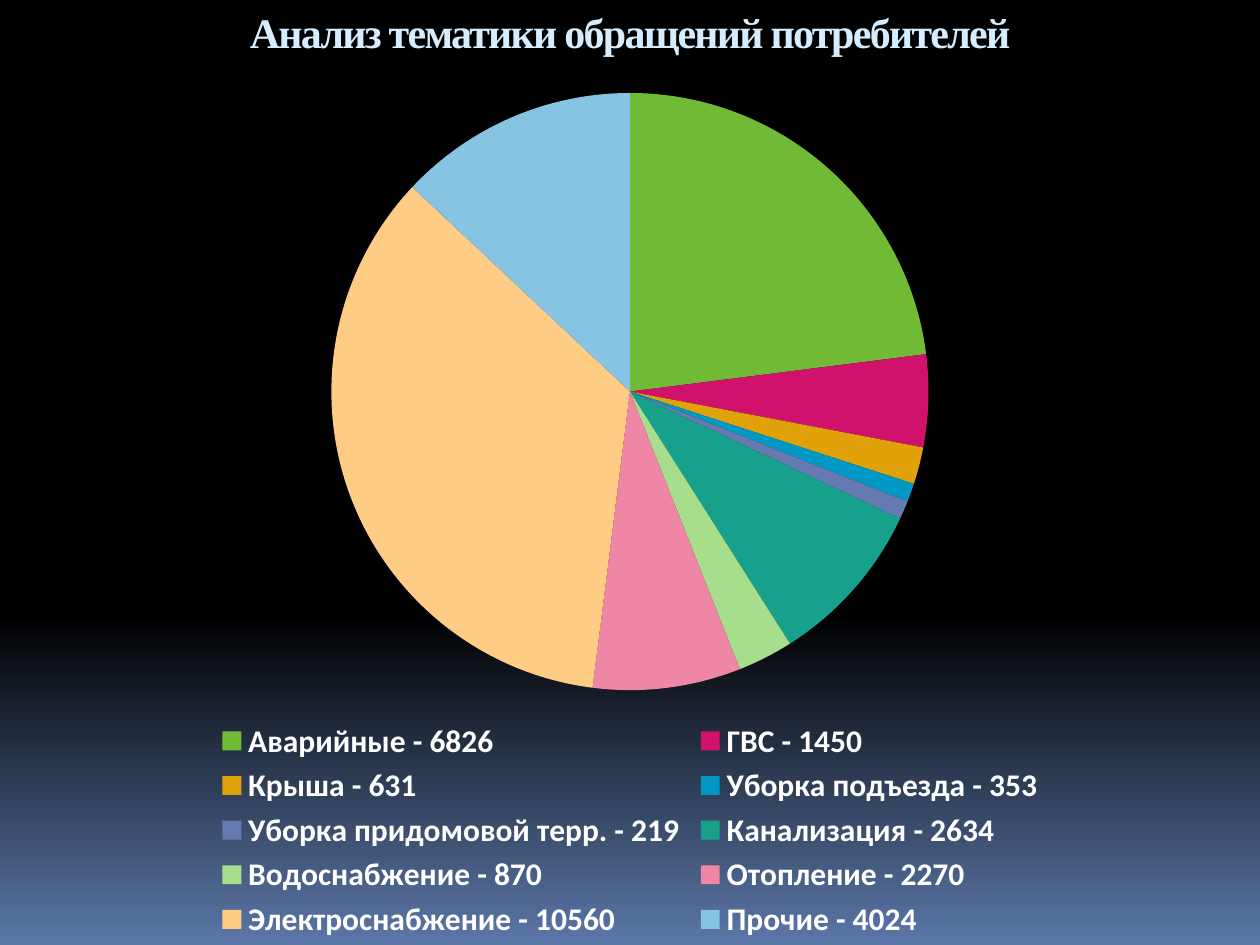
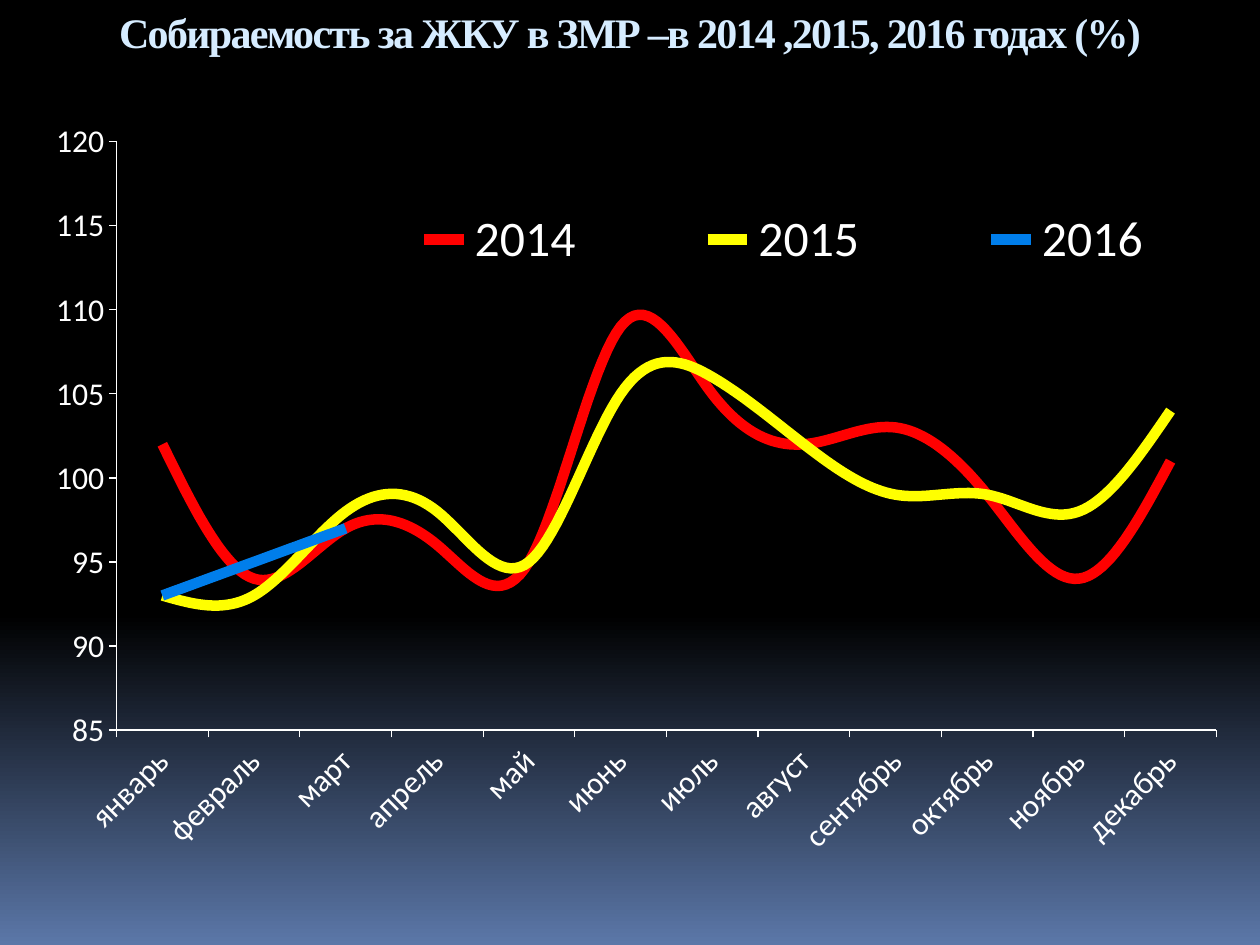
from dataclasses import dataclass

from lxml import etree
from pptx import Presentation
from pptx.chart.data import CategoryChartData
from pptx.dml.color import RGBColor
from pptx.enum.chart import XL_CHART_TYPE, XL_LEGEND_POSITION, XL_TICK_MARK
from pptx.enum.text import PP_ALIGN
from pptx.oxml.ns import qn
from pptx.util import Inches, Pt

PIE, LINE = XL_CHART_TYPE.PIE, XL_CHART_TYPE.LINE
BOTTOM, RIGHT = XL_LEGEND_POSITION.BOTTOM, XL_LEGEND_POSITION.RIGHT
CROSS = XL_TICK_MARK.OUTSIDE
CENTER = PP_ALIGN.CENTER

W, H = 10, 7.5

TOPICS_TITLE = "Анализ тематики обращений потребителей"
TOPICS = [
    ("Аварийные - 6826", 23, "70BA35"),
    ("ГВС - 1450", 5, "D1126C"),
    ("Крыша - 631", 2, "E0A208"),
    ("Уборка подъезда - 353", 1, "0098C4"),
    ("Уборка придомовой терр. - 219", 1, "657AB0"),
    ("Канализация - 2634", 9, "17A08C"),
    ("Водоснабжение - 870", 3, "A7DE8C"),
    ("Отопление - 2270", 8, "F086A6"),
    ("Электроснабжение - 10560", 35, "FFCC85"),
    ("Прочие - 4024", 13, "87C4E3"),
]

PAYMENT_TITLE = "Собираемость за ЖКУ в ЗМР –в 2014 ,2015, 2016 годах (%)"
MONTHS = ["январь", "февраль", "март", "апрель", "май", "июнь", "июль",
          "август", "сентябрь", "октябрь", "ноябрь", "декабрь"]
PAYMENT = [
    ("2014", "FF0000", [102, 94, 97, 96, 95, 109, 105, 102, 103, 99, 94, 101]),
    ("2015", "FFFF00", [93, 93, 98, 98, 95, 105, 106, 102, 99, 99, 98, 104]),
    ("2016", "007EEB", [93, 95, 97] + [None] * 9),
]


@dataclass(frozen=True)
class Theme:
    night: str = "000000"
    dusk: str = "5B77A8"
    title: str = "D6ECFF"
    text: str = "FFFFFF"
    title_font: str = "Times New Roman"
    chart_font: str = "Calibri"
    title_size: float = 24
    topics_size: float = 18
    axis_size: float = 18.1
    years_size: float = 28.4
    line_width: float = 6
    axis_width: float = 0.72


T = Theme()


def rgb(value):
    return RGBColor.from_string(value)


def add_slide(prs, title, title_height, tracking):
    s = prs.slides.add_slide(prs.slide_layouts[6])
    fill = s.background.fill
    fill.gradient()
    fill.gradient_angle = 270
    for stop, color, position in zip(fill.gradient_stops, (T.night, T.dusk), (0.65, 1)):
        stop.color.rgb = rgb(color)
        stop.position = position
    sp = s.shapes.add_textbox(0, 0, Inches(W), Inches(title_height))
    tf = sp.text_frame
    tf.word_wrap = True
    p = tf.paragraphs[0]
    p.alignment = CENTER
    r = p.add_run()
    r.text = title
    r.font.name, r.font.size, r.font.bold = T.title_font, Pt(T.title_size), True
    r.font.color.rgb = rgb(T.title)
    r.font._element.set("spc", str(tracking))
    return s


def place(parent, index, box, inner=False):
    for old in parent.findall(qn("c:layout")):
        parent.remove(old)
    layout = etree.Element(qn("c:layout"))
    manual = etree.SubElement(layout, qn("c:manualLayout"))
    settings = [("layoutTarget", "inner")] if inner else []
    settings += [("xMode", "edge"), ("yMode", "edge"), *zip("xywh", box)]
    for tag, value in settings:
        etree.SubElement(manual, qn("c:" + tag)).set("val", str(value))
    parent.insert(index, layout)


def add_chart(s, kind, top, categories, series, size, legend_at, plot_box, legend_box):
    data = CategoryChartData()
    data.categories = categories
    for name, values in series:
        data.add_series(name, values)
    chart = s.shapes.add_chart(kind, 0, Inches(top), Inches(W), Inches(H - top), data).chart
    chart.has_title = False
    chart.font.name, chart.font.size = T.chart_font, Pt(size)
    chart.font.color.rgb = rgb(T.text)
    chart.has_legend = True
    legend = chart.legend
    legend.position = legend_at
    legend.include_in_layout = False
    legend.font.name = T.chart_font
    legend.font.color.rgb = rgb(T.text)
    place(chart._chartSpace.chart.plotArea, 0, plot_box, inner=True)
    place(legend._element, 1, legend_box)
    return chart


def topics_slide(prs):
    s = add_slide(prs, TOPICS_TITLE, 0.5, -100)
    names, shares, colors = zip(*TOPICS)
    chart = add_chart(s, PIE, 0.6, names, [("Series 1", shares)], T.topics_size, BOTTOM,
                      (0.263, 0.02, 0.474, 0.687), (0.168, 0.736, 0.664, 0.266))
    chart.legend.font.size, chart.legend.font.bold = Pt(T.topics_size), True
    for i, color in enumerate(colors):
        fill = chart.series[0].points[i].format.fill
        fill.solid()
        fill.fore_color.rgb = rgb(color)


def payment_slide(prs):
    s = add_slide(prs, PAYMENT_TITLE, 0.91, -96)
    chart = add_chart(s, LINE, 0.915, MONTHS, [(year, values) for year, _, values in PAYMENT],
                      T.axis_size, RIGHT, (0.0925, 0.032, 0.873, 0.709),
                      (0.245, 0.1, 0.754, 0.1))
    chart.legend.font.size = Pt(T.years_size)
    for line, (_, color, _) in zip(chart.series, PAYMENT):
        line.smooth = True
        line.format.line.color.rgb = rgb(color)
        line.format.line.width = Pt(T.line_width)
    months, percent = chart.category_axis, chart.value_axis
    for axis in (months, percent):
        axis.has_major_gridlines = False
        axis.major_tick_mark = CROSS
        axis.format.line.color.rgb = rgb(T.text)
        axis.format.line.width = Pt(T.axis_width)
        axis.tick_labels.font.size = Pt(T.axis_size)
        axis.tick_labels.font.color.rgb = rgb(T.text)
    months._element.find(qn("c:txPr")).find(qn("a:bodyPr")).set("rot", "-2700000")
    percent.minimum_scale, percent.maximum_scale, percent.major_unit = 85, 120, 5


def main():
    prs = Presentation()
    prs.slide_width, prs.slide_height = Inches(W), Inches(H)
    topics_slide(prs)
    payment_slide(prs)
    prs.save("out.pptx")


if __name__ == "__main__":
    main()
